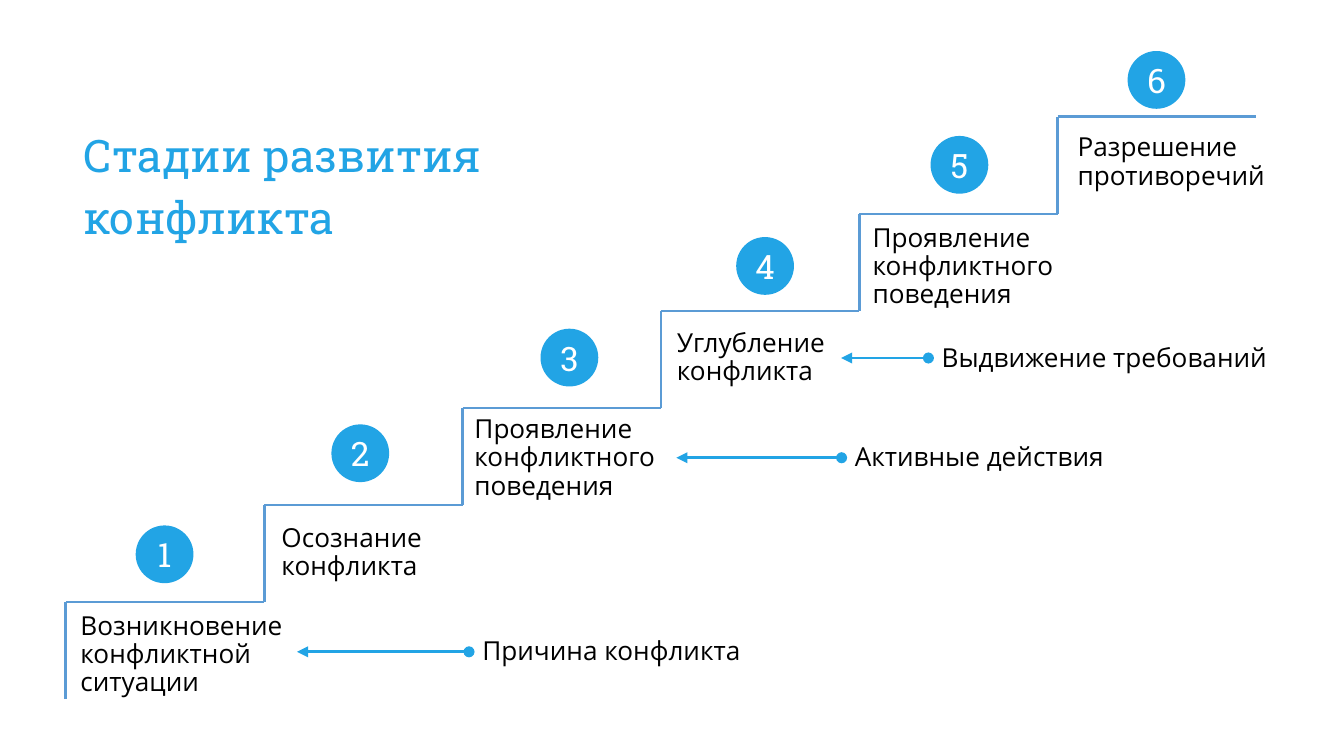
import pptx
import pptx.dml.color
import pptx.enum.shapes
import pptx.enum.text
import pptx.oxml
import pptx.util
from pptx.oxml.ns import qn

BLUE, STAIR, BLACK, WHITE = "22A4E5", "5B9BD5", "000000", "FFFFFF"
HEAD_FONT, BODY_FONT = "Roboto Slab", "Open Sans"

# Wide slide, 16:9
WIDTH = 10
HEIGHT = WIDTH * 9 / 16

# Stair grid: left end and height of the first tread, then one step right and up
LEFT, BASE = 0.49, 4.48
TREAD = (7.87 - LEFT) / 5
RISE = (BASE - 0.87) / 5
DISK = 0.43

# Label, its width and lines, label offset and disk offset from the step corner
STAGES = [
    ("Возникновение конфликтной ситуации", 1.85, 3, (0.01, 0.03), (0.52, -0.57)),
    ("Осознание конфликта", 1.39, 2, (0.03, 0.10), (0.50, -0.60)),
    ("Проявление конфликтного поведения", 1.6, 3, (-0.01, 0.01), (0.58, -0.59)),
    ("Углубление конфликта", 1.52, 2, (0.02, 0.09), (0.56, -0.55)),
    ("Проявление конфликтного поведения", 1.89, 3, (0, 0.03), (0.53, -0.58)),
    ("Разрешение противоречий", 1.6, 2, (0.05, 0.08), (0.52, -0.49)),
]

# Step, note, note width, arrow offset from the step corner, arrow length
NOTES = [
    (0, "Причина конфликта", 2.16, (1.72, 0.37), 1.28),
    (2, "Активные действия", 2.16, (1.59, 0.37), 1.23),
    (3, "Выдвижение требований", 2.7, (1.34, 0.35), 0.65),
]


def rgb(value):
    return pptx.dml.color.RGBColor.from_string(value)


def inches(*values):
    return [pptx.util.Inches(v) for v in values]


def corner(step, offset=(0, 0)):
    """Point at an offset from the left end of a step's tread."""
    return LEFT + step * TREAD + offset[0], BASE - step * RISE + offset[1]


def write(sp, text, font, size, color, spacing=1.0, align="LEFT", anchor="TOP"):
    tf = sp.text_frame
    tf.text = text
    tf.word_wrap = True
    tf.vertical_anchor = getattr(pptx.enum.text.MSO_ANCHOR, anchor)
    p = tf.paragraphs[0]
    p.alignment = getattr(pptx.enum.text.PP_ALIGN, align)
    p.line_spacing = spacing
    r = p.runs[0]
    r.font.name = font
    r.font.size = pptx.util.Pt(size)
    r.font.color.rgb = rgb(color)


def add_title(s, text):
    sp = s.shapes.title
    sp.left, sp.top, sp.width, sp.height = inches(0.52, 0.84, 3.71, 1.03)
    write(sp, text, HEAD_FONT, 24, BLUE, spacing=1.15)
    sp.text_frame.auto_size = pptx.enum.text.MSO_AUTO_SIZE.NONE
    sp.text_frame.paragraphs[0].space_after = pptx.util.Pt(10)


def add_label(s, text, x, y, width, lines=1):
    sp = s.shapes.add_textbox(*inches(x, y, width, 0.1 + 0.21 * lines))
    write(sp, text, BODY_FONT, 14, BLACK, spacing=0.9)


def add_line(s, x1, y1, x2, y2, color, ends=()):
    kind = pptx.enum.shapes.MSO_CONNECTOR.STRAIGHT
    line = s.shapes.add_connector(kind, *inches(x1, y1, x2, y2))
    line.line.color.rgb = rgb(color)
    line.line.width = pptx.util.Pt(1.5)
    sp_pr = line._element.find(qn("p:spPr"))
    ln = sp_pr.find(qn("a:ln"))
    for tag, end in zip(("a:headEnd", "a:tailEnd"), ends):
        ln.append(pptx.oxml.xmlchemy.OxmlElement(tag))
        ln[-1].set("type", end)
    sp_pr.append(pptx.oxml.xmlchemy.OxmlElement("a:effectLst"))


def add_disk(s, number, x, y):
    oval = pptx.enum.shapes.MSO_SHAPE.OVAL
    sp = s.shapes.add_shape(oval, *inches(x, y, DISK, DISK))
    sp.shadow.inherit = False
    sp.fill.solid()
    sp.fill.fore_color.rgb = rgb(BLUE)
    sp.line.fill.background()
    tf = sp.text_frame
    tf.margin_left = tf.margin_right = tf.margin_top = tf.margin_bottom = 0
    write(sp, str(number), HEAD_FONT, 18, WHITE, align="CENTER", anchor="MIDDLE")


def add_step(s, step):
    x, y = corner(step)
    add_line(s, x, y, x + TREAD, y, STAIR)
    add_line(s, x, y + RISE, x, y, STAIR)


def add_note(s, step, text, width, offset, length):
    x, y = corner(step, offset)
    add_line(s, x, y, x + length, y, BLUE, ends=("triangle", "oval"))
    add_label(s, text, x + length, y - 0.15, width)


def main():
    prs = pptx.Presentation()
    prs.slide_width, prs.slide_height = inches(WIDTH, HEIGHT)
    s = prs.slides.add_slide(prs.slide_layouts[5])
    add_title(s, "Стадии развития конфликта")

    # Staircase with a label under and a numbered disk over each tread
    for step, (text, width, lines, label_at, disk_at) in enumerate(STAGES):
        add_step(s, step)
        add_label(s, text, *corner(step, label_at), width, lines)
        add_disk(s, step + 1, *corner(step, disk_at))

    # Side notes pointing at their stages
    for note in NOTES:
        add_note(s, *note)

    prs.save("out.pptx")


if __name__ == "__main__":
    main()
